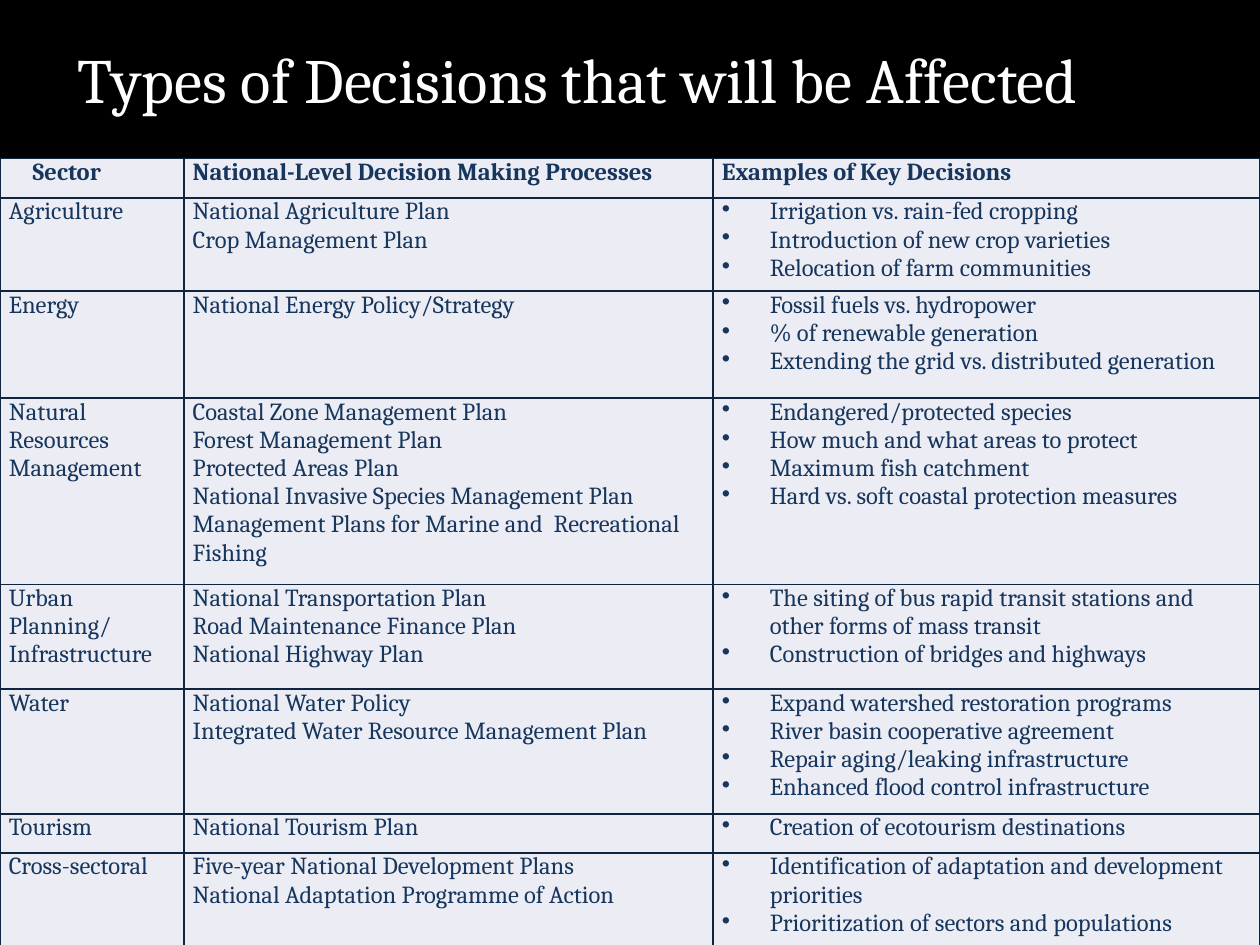
from dataclasses import dataclass

from lxml.etree import SubElement
from pptx import Presentation
from pptx.dml.color import RGBColor
from pptx.enum.text import MSO_ANCHOR
from pptx.oxml.ns import qn
from pptx.util import Inches, Pt


@dataclass(frozen=True)
class Theme:
    font: str = "Cambria"
    back: str = "000000"
    title: str = "FFFFFF"
    ink: str = "17365D"
    fill: str = "ECEDF4"
    edge: str = "0F243E"
    base: str = "000000"
    big: int = 36
    body: int = 14


THEME = Theme()

COLS = [1.46, 4.2, 4.34]
TALL = [0.31, 0.74, 0.85, 1.48, 0.83, 0.99, 0.31, 0.74]
HEAD = ["Sector", "National-Level Decision Making Processes",
        "Examples of Key Decisions"]

# Sector, its planning processes, its key decisions
ROWS = [
    ("Agriculture",
     ["National Agriculture Plan", "Crop Management Plan"],
     ["Irrigation vs. rain-fed cropping",
      "Introduction of new crop varieties",
      "Relocation of farm communities"]),
    ("Energy",
     ["National Energy Policy/Strategy"],
     ["Fossil fuels vs. hydropower",
      "% of renewable generation",
      "Extending the grid vs. distributed generation"]),
    ("Natural Resources Management",
     ["Coastal Zone Management Plan",
      "Forest Management Plan",
      "Protected Areas Plan",
      "National Invasive Species Management Plan",
      "Management Plans for Marine and  Recreational Fishing"],
     ["Endangered/protected species",
      "How much and what areas to protect",
      "Maximum fish catchment",
      "Hard vs. soft coastal protection measures"]),
    ("Urban Planning/ Infrastructure",
     ["National Transportation Plan",
      "Road Maintenance Finance Plan",
      "National Highway Plan"],
     ["The siting of bus rapid transit stations and other forms of mass transit",
      "Construction of bridges and highways"]),
    ("Water",
     ["National Water Policy",
      "Integrated Water Resource Management Plan"],
     ["Expand watershed restoration programs",
      "River basin cooperative agreement",
      "Repair aging/leaking infrastructure",
      "Enhanced flood control infrastructure"]),
    ("Tourism",
     ["National Tourism Plan"],
     ["Creation of ecotourism destinations"]),
    ("Cross-sectoral",
     ["Five-year National Development Plans",
      "National Adaptation Programme of Action"],
     ["Identification of adaptation and development priorities",
      "Prioritization of sectors and populations"]),
]


def add_run(para, text, size, color, bold=False):
    run = para.add_run()
    run.text = text
    run.font.name = THEME.font
    run.font.size = Pt(size)
    run.font.bold = bold
    run.font.color.rgb = RGBColor.from_string(color)


def indent(para, left, first, bullet=None):
    props = para._p.get_or_add_pPr()
    props.set("marL", str(Inches(left)))
    props.set("indent", str(Inches(first)))
    if bullet:
        SubElement(props, qn("a:buChar"), char=bullet)


def add_edges(cell, last):
    props = cell._tc.get_or_add_tcPr()
    for side in ("lnL", "lnR", "lnT", "lnB"):
        color = THEME.base if last and side == "lnB" else THEME.edge
        line = SubElement(props, qn(f"a:{side}"), w=str(Pt(1)))
        paint = SubElement(line, qn("a:solidFill"))
        SubElement(paint, qn("a:srgbClr"), val=color)


def fill_cell(cell, lines, bold=False, bullet=None, last=False):
    cell.margin_left = cell.margin_right = Inches(0.07)
    cell.margin_top = cell.margin_bottom = 0
    # Edges must come before the fill in the cell's XML
    add_edges(cell, last)
    cell.fill.solid()
    cell.fill.fore_color.rgb = RGBColor.from_string(THEME.fill)
    frame = cell.text_frame
    for i, text in enumerate(lines):
        para = frame.add_paragraph() if i else frame.paragraphs[0]
        if bullet:
            indent(para, 0.38, -0.38, bullet)
        add_run(para, text, THEME.body, THEME.ink, bold)


def add_title(slide, left, top, width, height):
    box = slide.shapes.add_textbox(
        Inches(left), Inches(top), Inches(width), Inches(height))
    frame = box.text_frame
    frame.word_wrap = True
    frame.vertical_anchor = MSO_ANCHOR.MIDDLE
    add_run(frame.paragraphs[0], "Types of Decisions that will be Affected",
            THEME.big, THEME.title)


def add_grid(slide, left, top, width, height):
    table = slide.shapes.add_table(
        len(TALL), len(COLS), Inches(left), Inches(top),
        Inches(width), Inches(height)).table
    for col, size in zip(table.columns, COLS):
        col.width = Inches(size)
    for row, size in zip(table.rows, TALL):
        row.height = Inches(size)

    # Header row
    for c, text in enumerate(HEAD):
        fill_cell(table.cell(0, c), [text], bold=True)
    indent(table.cell(0, 0).text_frame.paragraphs[0], 0, 0.19)

    # Sector rows
    for r, (sector, plans, picks) in enumerate(ROWS, 1):
        last = r == len(ROWS)
        fill_cell(table.cell(r, 0), [sector], last=last)
        fill_cell(table.cell(r, 1), plans, last=last)
        fill_cell(table.cell(r, 2), picks, bullet="•", last=last)


def main():
    deck = Presentation()
    deck.slide_width, deck.slide_height = Inches(10), Inches(7.5)
    slide = deck.slides.add_slide(deck.slide_layouts[6])
    back = slide.background.fill
    back.solid()
    back.fore_color.rgb = RGBColor.from_string(THEME.back)
    add_title(slide, 0.52, 0, 9, 1.25)
    add_grid(slide, 0, 1.26, 10, 6.24)
    deck.save("out.pptx")


if __name__ == "__main__":
    main()
